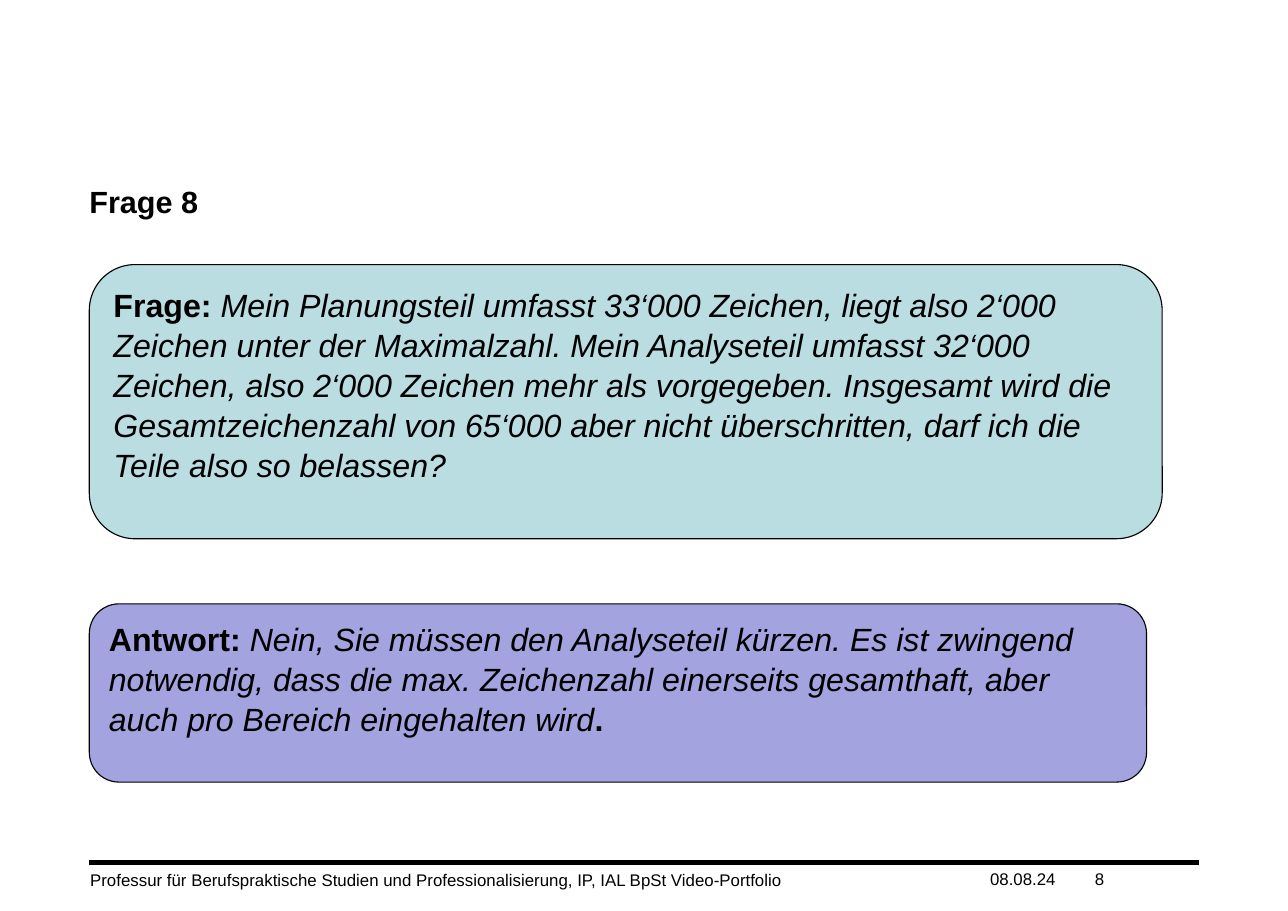
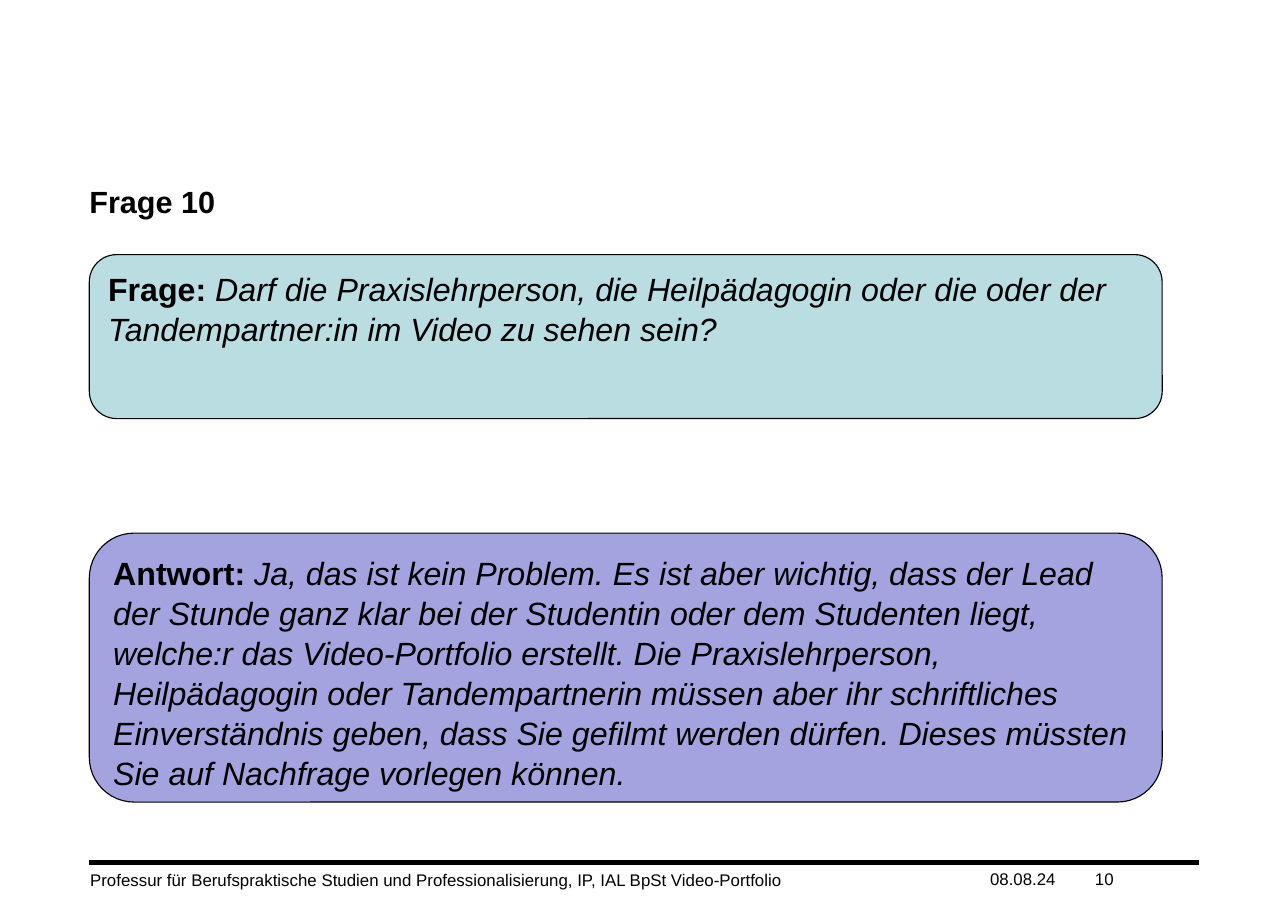
"""Build two question-and-answer slides with a shared title style and footer."""
from pptx import Presentation
from pptx.dml.color import RGBColor
from pptx.enum.shapes import MSO_CONNECTOR, MSO_SHAPE
from pptx.enum.text import MSO_ANCHOR, MSO_AUTO_SIZE, PP_ALIGN
from pptx.oxml.xmlchemy import OxmlElement
from pptx.util import Cm, Pt

ROUND = MSO_SHAPE.ROUNDED_RECTANGLE
STRAIGHT = MSO_CONNECTOR.STRAIGHT
TOP, BOTTOM = MSO_ANCHOR.TOP, MSO_ANCHOR.BOTTOM
FIXED = MSO_AUTO_SIZE.NONE
LEFT = PP_ALIGN.LEFT

BLACK, TEAL, LILAC = "000000", "BADDE1", "A3A3E0"
FONT = "Arial"
EDGE, RIGHT = 2.06, 27.64
FOOT = "Professur für Berufspraktische Studien und Professionalisierung, IP, IAL BpSt Video-Portfolio"
DATE = "08.08.24"

PAGES = [
    (8, [
        (6.1, 24.74, 6.32, TEAL, [
            ("Frage: ", "b"),
            ("Mein Planungsteil umfasst 33‘000 Zeichen, liegt also 2‘000 Zeichen unter der "
             "Maximalzahl. Mein Analyseteil umfasst 32‘000 Zeichen, also 2‘000 Zeichen mehr als "
             "vorgegeben. Insgesamt wird die Gesamtzeichenzahl von 65‘000 aber nicht "
             "überschritten, darf ich die Teile also so belassen?", "i")]),
        (13.92, 24.38, 4.11, LILAC, [
            ("Antwort: ", "b"),
            ("Nein, Sie müssen den Analyseteil kürzen. Es ist zwingend notwendig, dass die max. "
             "Zeichenzahl einerseits gesamthaft, aber auch pro Bereich eingehalten wird", "i"),
            (".", "b")]),
    ]),
    (10, [
        (5.87, 24.74, 3.78, TEAL, [
            ("Frage: ", "b"),
            ("Darf die Praxislehrperson, die Heilpädagogin oder die oder der Tandempartner:in "
             "im Video zu sehen sein?", "i")]),
        (12.29, 24.74, 6.2, LILAC, [
            ("Antwort: ", "b"),
            ("Ja, das ist kein Problem. Es ist aber wichtig, dass der Lead der Stunde ganz klar "
             "bei der Studentin oder dem Studenten liegt, welche:r das Video-Portfolio erstellt. "
             "Die Praxislehrperson, Heilpädagogin oder Tandempartnerin müssen aber ihr "
             "schriftliches Einverständnis geben, dass Sie gefilmt werden dürfen. Dieses müssten "
             "Sie auf Nachfrage vorlegen können.", "i")]),
    ]),
]


def tint(code):
    return RGBColor.from_string(code)


def write(frame, parts, size=11, anchor=TOP, inset=None, space=1.0):
    frame.word_wrap = True
    frame.auto_size = FIXED
    frame.vertical_anchor = anchor
    if inset is not None:
        frame.margin_left = frame.margin_right = Cm(inset)
        frame.margin_top = frame.margin_bottom = Cm(inset)
    para = frame.paragraphs[0]
    para.alignment = LEFT
    para.line_spacing = space
    for text, style in parts:
        run = para.add_run()
        run.text = text
        run.font.name = FONT
        run.font.size = Pt(size)
        run.font.bold = style == "b"
        run.font.italic = style == "i"
        run.font.color.rgb = tint(BLACK)


deck = Presentation()
deck.slide_width, deck.slide_height = Cm(29.7), Cm(21)

for page, cards in PAGES:
    slide = deck.slides.add_slide(deck.slide_layouts[5])
    shapes = slide.shapes

    rule = shapes.add_connector(STRAIGHT, Cm(EDGE), Cm(19.88), Cm(RIGHT), Cm(19.88))
    rule.line.color.rgb = tint(BLACK)
    rule.line.width = Pt(3)
    rule._element.spPr.append(OxmlElement("a:effectLst"))

    foot = shapes.add_textbox(Cm(1.83), Cm(19.9), Cm(23.75), Cm(0.74))
    write(foot.text_frame, [(FOOT, "")], space=1.04)
    for left, text in [(22.83, DATE), (25.25, str(page))]:
        box = shapes.add_textbox(Cm(left), Cm(19.99), Cm(2.4), Cm(0.51))
        write(box.text_frame, [(text, "")], anchor=BOTTOM, inset=0)

    title = shapes.title
    title.left, title.top = Cm(EDGE), Cm(4.19)
    title.width, title.height = Cm(25.6), Cm(1.02)
    write(title.text_frame, [(f"Frage {page}", "b")], size=20, inset=0, space=1.04)

    for top, width, height, fill, parts in cards:
        card = shapes.add_shape(ROUND, Cm(EDGE), Cm(top), Cm(width), Cm(height))
        card.shadow.inherit = False
        card.fill.solid()
        card.fill.fore_color.rgb = tint(fill)
        card.line.color.rgb = tint(BLACK)
        card.line.width = Pt(0.75)
        write(card.text_frame, parts, size=21, space=1.04)

deck.save("out.pptx")
